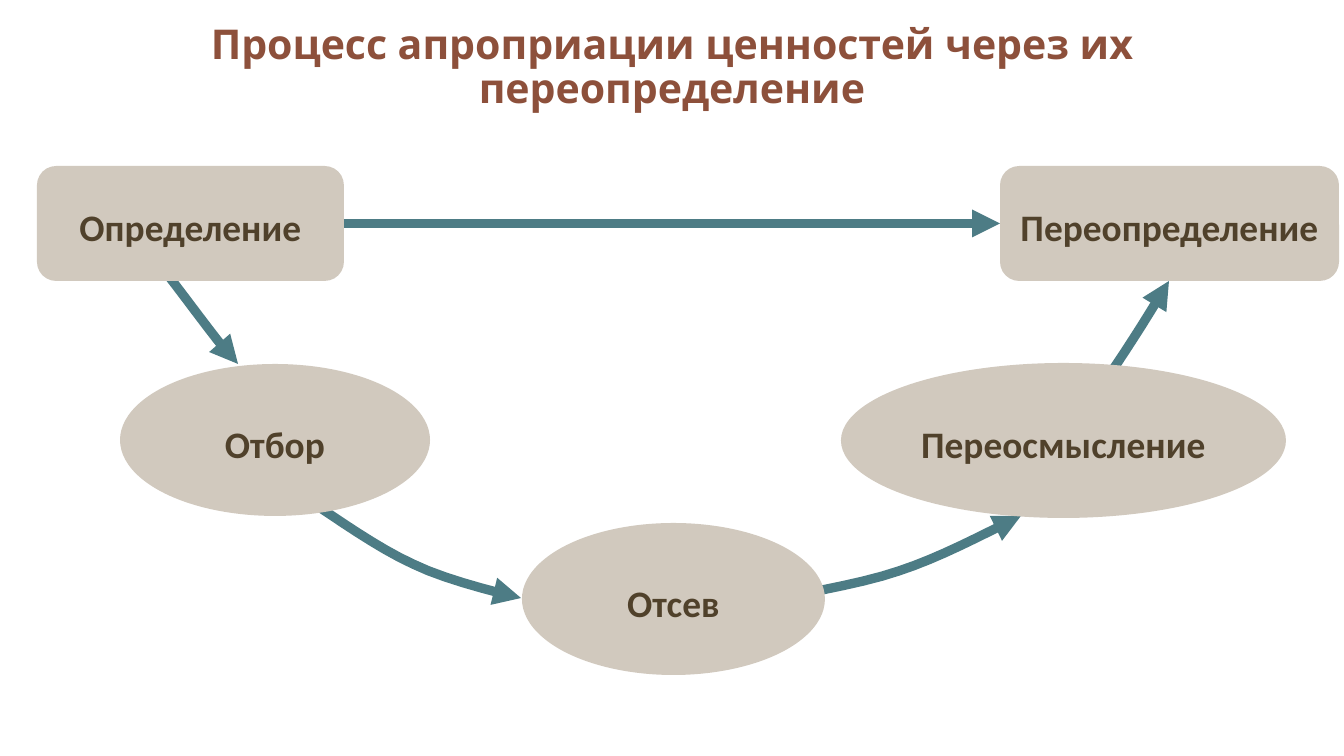
from lxml import etree
from pptx import Presentation
from pptx.dml.color import RGBColor
from pptx.enum.shapes import MSO_CONNECTOR, MSO_SHAPE
from pptx.enum.text import MSO_ANCHOR, MSO_AUTO_SIZE, PP_ALIGN
from pptx.oxml.ns import qn
from pptx.util import Emu, Pt

ROUNDED = MSO_SHAPE.ROUNDED_RECTANGLE
ELLIPSE = MSO_SHAPE.OVAL
STRAIGHT = MSO_CONNECTOR.STRAIGHT
CENTER = PP_ALIGN.CENTER
MIDDLE = MSO_ANCHOR.MIDDLE
NO_AUTOFIT = MSO_AUTO_SIZE.NONE
CURVE_STEPS = 8
LEFT, RIGHT = 1, 3

COLORS = {"title": "8D503B", "node": "D1C9BE", "text": "50412B", "arrow": "4D7C85"}


def px(n):
    return Emu(round(n * 914400 / 134.4))


def bezier(a, b, c, d, t):
    u = 1 - t
    return tuple(
        u**3 * a[i] + 3 * u * u * t * b[i] + 3 * u * t * t * c[i] + t**3 * d[i]
        for i in range(2)
    )


class Diagram:
    def __init__(self, slide):
        self.slide = slide
        self.shapes = slide.shapes

    def color(self, name):
        return RGBColor.from_string(COLORS[name])

    def set_text(self, sp, text, font, size, color):
        tf = sp.text_frame
        tf.text = text
        tf.vertical_anchor = MIDDLE
        p = tf.paragraphs[0]
        p.alignment = CENTER
        f = p.runs[0].font
        f.name, f.size, f.bold = font, Pt(size), True
        f.color.rgb = self.color(color)
        return p

    def title(self, text, x, y, w, h):
        sp = self.shapes.title
        sp.left, sp.top, sp.width, sp.height = map(px, (x, y, w, h))
        p = self.set_text(sp, text, "Open Sans", 22, "title")
        p.line_spacing = 0.9
        sp.text_frame.auto_size = NO_AUTOFIT

    def node(self, kind, text, x, y, w, h):
        sp = self.shapes.add_shape(kind, *map(px, (x, y, w, h)))
        sp.shadow.inherit = False
        sp.fill.solid()
        sp.fill.fore_color.rgb = self.color("node")
        sp.line.fill.background()
        p = self.set_text(sp, text, "Calibri", 20, "text")
        p.line_spacing = 1.15
        p.space_after = Pt(10)
        sp.text_frame.word_wrap = False
        return sp

    def style_arrow(self, sp):
        sp.line.color.rgb = self.color("arrow")
        sp.line.width = Pt(5)
        ln = sp.line._get_or_add_ln()
        etree.SubElement(ln, qn("a:tailEnd"), type="triangle")

    def curve(self, *points):
        route = []
        for i in range(0, len(points) - 1, 3):
            route += [
                bezier(*points[i:i + 4], k / CURVE_STEPS)
                for k in range(1, CURVE_STEPS + 1)
            ]
        start, *rest = [(px(x), px(y)) for x, y in [points[0]] + route]
        builder = self.shapes.build_freeform(*start)
        builder.add_line_segments(rest, close=False)
        sp = builder.convert_to_shape()
        sp.shadow.inherit = False
        sp.fill.background()
        self.style_arrow(sp)

    def connect(self, source, target):
        line = self.shapes.add_connector(STRAIGHT, 0, 0, 0, 0)
        line.begin_connect(source, RIGHT)
        line.end_connect(target, LEFT)
        self.style_arrow(line)
        etree.SubElement(line._element.spPr, qn("a:effectLst"))


def main():
    prs = Presentation()
    prs.slide_width, prs.slide_height = px(1344), px(756)
    s = Diagram(prs.slides.add_slide(prs.slide_layouts[5]))

    s.title("Процесс апроприации ценностей через их переопределение", 16, 0, 1312, 136)

    s.curve((164, 270), (195, 310), (224, 351), (238, 364))
    s.curve((301, 495), (339, 520), (376, 547), (413, 564),
            (449, 582), (521, 598), (521, 598))
    s.curve((778, 598), (778, 598), (859, 585), (899, 571),
            (939, 558), (980, 536), (1021, 516))
    s.curve((1107, 378), (1118, 363), (1144, 323), (1169, 281))

    definition = s.node(ROUNDED, "Определение", 37, 166, 307, 115)
    redefinition = s.node(ROUNDED, "Переопределение", 1000, 166, 339, 115)
    s.node(ELLIPSE, "Отбор", 120, 364, 310, 152)
    s.node(ELLIPSE, "Отсев", 522, 523, 303, 152)
    s.node(ELLIPSE, "Переосмысление", 841, 363, 445, 155)
    s.connect(definition, redefinition)

    prs.save("out.pptx")


if __name__ == "__main__":
    main()
